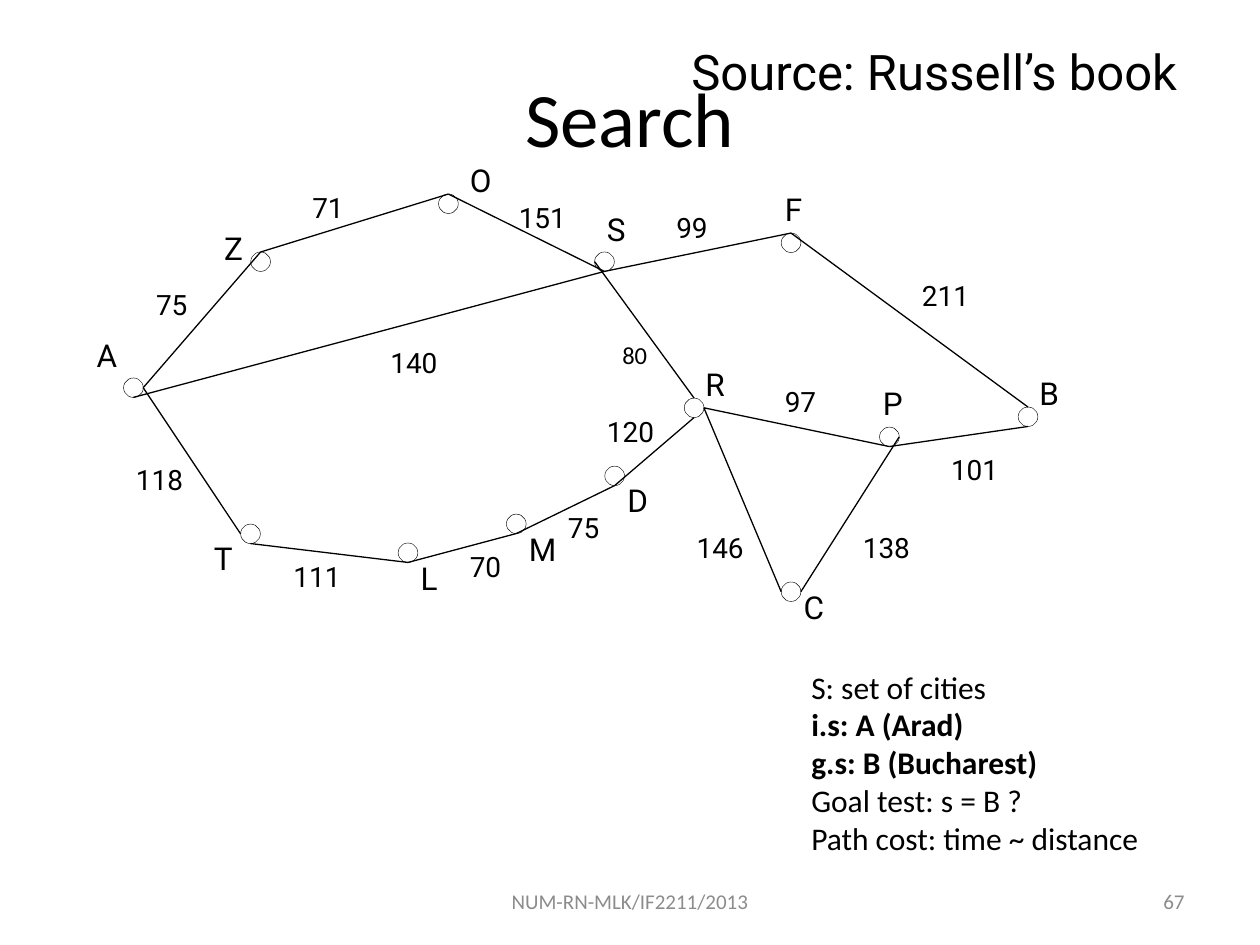
from typing import NamedTuple

from lxml import etree
from pptx import Presentation
from pptx.dml.color import RGBColor
from pptx.enum import shapes, text
from pptx.oxml import ns
from pptx.util import Pt

NODE_W, NODE_H = 11.25, 11.1
BLACK, GREY = "000000", "8C8C8C"
LEFT, CENTER, RIGHT = (text.PP_ALIGN.LEFT, text.PP_ALIGN.CENTER,
                       text.PP_ALIGN.RIGHT)
SIDES = {"top": (0.5, 0), "left": (0, 0.5), "bottom": (0.5, 1), "right": (1, 0.5)}


class Box(NamedTuple):
    left: float
    top: float
    width: float
    height: float


class City(NamedTuple):
    x: float
    y: float
    label_x: float
    label_y: float


class Road(NamedTuple):
    start: str
    start_side: str
    end: str
    end_side: str
    cost: str
    cost_x: float
    cost_y: float


CITIES = {
    "A": City(70.6, 216, 48.2, 188.6),
    "T": City(137.5, 299.5, 115.2, 304.6),
    "R": City(391, 227.5, 396, 205.2),
    "C": City(446.4, 332.6, 452.2, 332.6),
    "P": City(502.6, 244.1, 497.5, 216),
    "B": City(581.8, 232.6, 586.8, 210.2),
    "F": City(446.4, 133.2, 441.4, 105.1),
    "S": City(339.8, 144, 339.8, 116.6),
    "O": City(250.6, 110.9, 261.4, 88.6),
    "Z": City(143.3, 144, 121, 127.4),
    "D": City(345.6, 266.4, 351.4, 271.4),
    "M": City(289.4, 293.8, 295.2, 299.5),
    "L": City(227.5, 310.3, 233.3, 316.1),
}

ROADS = [
    Road("A", "right", "Z", "top", "75", 82.1, 160.6),
    Road("Z", "top", "O", "top", "71", 171.4, 105.1),
    Road("O", "top", "S", "bottom", "151", 289.4, 110.9),
    Road("A", "bottom", "S", "bottom", "140", 216, 193.7),
    Road("P", "bottom", "B", "bottom", "101", 536.4, 254.9),
    Road("R", "right", "P", "bottom", "97", 441.4, 216),
    Road("C", "right", "P", "right", "138", 486, 299.5),
    Road("C", "left", "R", "right", "146", 391, 299.5),
    Road("D", "bottom", "R", "bottom", "120", 339.8, 233.3),
    Road("M", "bottom", "D", "bottom", "75", 317.5, 288),
    Road("L", "bottom", "M", "bottom", "70", 261.4, 310.3),
    Road("T", "left", "A", "right", "118", 70.6, 260.6),
    Road("T", "bottom", "L", "bottom", "111", 160.6, 316.1),
    Road("R", "top", "S", "left", "80", 348.5, 190.8),
    Road("S", "bottom", "F", "top", "99", 379.4, 116.6),
    Road("F", "top", "B", "top", "211", 519.8, 155.5),
]

PROBLEM = [
    ("S: set of cities", False),
    ("i.s: A (Arad)", True),
    ("g.s: B (Bucharest)", True),
    ("Goal test: s = B ?", False),
    ("Path cost: time ~ distance", False),
]


def rgb(value: str) -> RGBColor:
    return RGBColor.from_string(value)


def add_text(slide, box: Box, lines: list[tuple[str, bool]], size: float,
             font: str = "Roboto", color: str = BLACK, align=LEFT,
             anchor=text.MSO_ANCHOR.TOP, wrap: bool = True) -> None:
    """Place (wording, bold) lines in a text box, one paragraph each."""
    frame = slide.shapes.add_textbox(*map(Pt, box)).text_frame
    frame.word_wrap = wrap
    frame.vertical_anchor = anchor
    for index, (wording, bold) in enumerate(lines):
        paragraph = frame.paragraphs[0] if index == 0 else frame.add_paragraph()
        paragraph.alignment = align
        run = paragraph.add_run()
        run.text = wording
        for name, value in {"name": font, "size": Pt(size), "bold": bold}.items():
            setattr(run.font, name, value)
        run.font.color.rgb = rgb(color)


def add_city(slide, city: City) -> None:
    circle = slide.shapes.add_shape(
        shapes.MSO_SHAPE.OVAL, *map(Pt, (city.x, city.y, NODE_W, NODE_H)))
    circle.shadow.inherit = False
    circle.fill.background()
    circle.line.color.rgb = rgb(BLACK)
    circle.line.width = Pt(0.25)


def side_point(name: str, side: str) -> tuple[Pt, Pt]:
    city, (across, down) = CITIES[name], SIDES[side]
    return Pt(city.x + across * NODE_W), Pt(city.y + down * NODE_H)


def add_road(slide, road: Road) -> None:
    line = slide.shapes.add_connector(
        shapes.MSO_CONNECTOR.STRAIGHT,
        *side_point(road.start, road.start_side),
        *side_point(road.end, road.end_side))
    line.line.color.rgb = rgb(BLACK)
    line.line.width = Pt(0.75)
    etree.SubElement(line._element.spPr, ns.qn("a:effectLst"))


def add_cost(slide, road: Road) -> None:
    if {road.start, road.end} == {"R", "S"}:
        box = Box(road.cost_x, road.cost_y, 30.2, 23.8)
        add_text(slide, box, [(road.cost, False)], 14, "Calibri", wrap=False)
    else:
        box = Box(road.cost_x, road.cost_y, 45, 26.6)
        add_text(slide, box, [(road.cost, False)], 16)


def main() -> None:
    deck = Presentation()
    deck.slide_width, deck.slide_height = Pt(720), Pt(540)
    slide = deck.slides.add_slide(deck.slide_layouts[6])

    middle = text.MSO_ANCHOR.MIDDLE
    add_text(slide, Box(246, 500.5, 228, 28.75), [("NUM-RN-MLK/IF2211/2013", False)],
             12, "Calibri", GREY, CENTER, middle)
    add_text(slide, Box(516, 500.5, 168, 28.75), [("67", False)],
             12, "Calibri", GREY, RIGHT, middle)
    add_text(slide, Box(36, 21.6, 648, 90), [("Search", False)],
             44, "Calibri", align=CENTER, anchor=middle)
    add_text(slide, Box(388, 20.2, 293, 41), [("Source: Russell’s book", False)], 28)
    add_text(slide, Box(456.5, 378, 237, 115.2), PROBLEM, 18, "Calibri")

    for city in CITIES.values():
        add_city(slide, city)
    for road in ROADS:
        add_road(slide, road)
    for name, city in CITIES.items():
        add_text(slide, Box(city.label_x, city.label_y, 33.8, 28.8),
                 [(name, False)], 18)
    for road in ROADS:
        add_cost(slide, road)

    deck.save("out.pptx")


if __name__ == "__main__":
    main()
